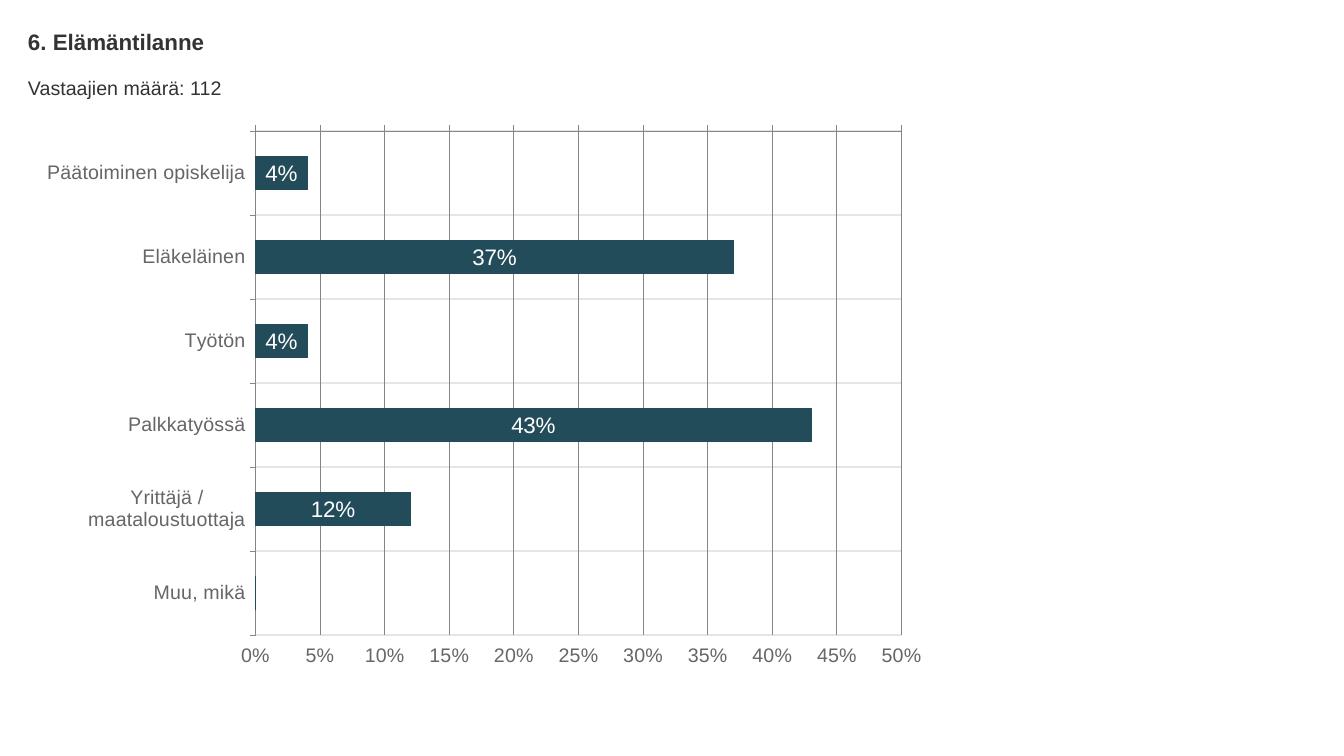
from dataclasses import dataclass

from lxml.etree import SubElement
from pptx import Presentation
from pptx.chart.data import CategoryChartData
from pptx.dml.color import RGBColor
from pptx.enum.chart import XL_CHART_TYPE as ChartType
from pptx.enum.chart import XL_LABEL_POSITION as LabelPosition
from pptx.enum.chart import XL_TICK_LABEL_POSITION as TickLabels
from pptx.enum.chart import XL_TICK_MARK as TickMark
from pptx.enum.text import MSO_AUTO_SIZE as AutoSize
from pptx.oxml.ns import qn
from pptx.util import Emu, Pt

ANSWERS = {
    "Päätoiminen opiskelija": 0.04,
    "Eläkeläinen": 0.37,
    "Työtön": 0.04,
    "Palkkatyössä": 0.43,
    "Yrittäjä / maataloustuottaja": 0.12,
    "Muu, mikä": 0,
}


@dataclass(frozen=True)
class Theme:
    font: str = "Arial"
    ink: str = "333333"
    axis_text: str = "666666"
    axis_line: str = "868686"
    row_line: str = "E6E6E6"
    bar: str = "234C5A"
    bar_text: str = "FFFFFF"
    title_size: int = 16
    body_size: int = 14
    label_size: int = 16


class SurveySlide:
    EMU_PER_PX = 914400 / 100.8

    def __init__(self, presentation, theme):
        self.theme = theme
        presentation.slide_width = self.px(1344)
        presentation.slide_height = self.px(756)
        self.slide = presentation.slides.add_slide(presentation.slide_layouts[6])

    def px(self, length):
        return Emu(round(length * self.EMU_PER_PX))

    def box(self, *lengths):
        return [self.px(length) for length in lengths]

    def style_font(self, font, size, color, bold=False):
        font.name = self.theme.font
        font.size = Pt(size)
        font.bold = bold
        font.color.rgb = RGBColor.from_string(color)

    def style_line(self, line, color, width=0.75):
        line.color.rgb = RGBColor.from_string(color)
        line.width = Pt(width)

    def text(self, content, box, size, bold=False):
        frame = self.slide.shapes.add_textbox(*self.box(*box)).text_frame
        frame.margin_left = frame.margin_right = 0
        frame.margin_top = frame.margin_bottom = 0
        frame.word_wrap = True
        frame.auto_size = AutoSize.SHAPE_TO_FIT_TEXT
        frame.text = content
        self.style_font(frame.paragraphs[0].runs[0].font, size, self.theme.ink, bold)

    def style_axis(self, axis, grid_color, grid_width):
        axis.has_major_gridlines = True
        axis.major_tick_mark = TickMark.OUTSIDE
        axis.minor_tick_mark = TickMark.NONE
        self.style_font(axis.tick_labels.font, self.theme.body_size, self.theme.axis_text)
        self.style_line(axis.format.line, self.theme.axis_line)
        self.style_line(axis.major_gridlines.format.line, grid_color, grid_width)

    def place_plot(self, chart, **fractions):
        plot_area = chart.plots[0]._element.getparent()
        layout = plot_area.find(qn("c:layout"))
        if layout is None:
            layout = SubElement(plot_area, qn("c:layout"))
            plot_area.insert(0, layout)
        manual = SubElement(layout, qn("c:manualLayout"))
        settings = {"layoutTarget": "inner", "xMode": "edge", "yMode": "edge", **fractions}
        for name, value in settings.items():
            SubElement(manual, qn(f"c:{name}")).set("val", str(value))

    def bar_chart(self, answers, box):
        theme = self.theme
        data = CategoryChartData(number_format="0%")
        data.categories = list(answers)
        data.add_series("Series 1", list(answers.values()))
        chart = self.slide.shapes.add_chart(
            ChartType.BAR_CLUSTERED, *self.box(*box), data
        ).chart
        chart.has_legend = False
        chart.has_title = False
        self.style_font(chart.font, theme.body_size, theme.axis_text)

        rows = chart.category_axis
        self.style_axis(rows, theme.row_line, 1)
        rows.reverse_order = True
        rows.tick_label_position = TickLabels.LOW

        scale = chart.value_axis
        self.style_axis(scale, theme.axis_line, 0.75)
        scale.minimum_scale, scale.maximum_scale, scale.major_unit = 0, 0.5, 0.05
        scale.tick_label_position = TickLabels.HIGH
        scale.tick_labels.number_format = "0%"
        scale.tick_labels.number_format_is_linked = False

        plot = chart.plots[0]
        plot.gap_width = 150
        plot.vary_by_categories = False
        plot.has_data_labels = True
        labels = plot.data_labels
        labels.show_value = True
        labels.number_format = "0%;;"
        labels.number_format_is_linked = False
        labels.position = LabelPosition.CENTER
        self.style_font(labels.font, theme.label_size, theme.bar_text)

        bars = plot.series[0].format
        bars.fill.solid()
        bars.fill.fore_color.rgb = RGBColor.from_string(theme.bar)
        self.style_line(bars.line, theme.bar)
        self.place_plot(chart, x=0.25, y=0.02, w=0.71, h=0.9)


def main():
    presentation = Presentation()
    theme = Theme()
    survey = SurveySlide(presentation, theme)
    survey.text("6. Elämäntilanne", (28, 28, 1288, 27), theme.title_size, bold=True)
    survey.text("Vastaajien määrä: 112", (28, 76, 1288, 23), theme.body_size)
    survey.bar_chart(ANSWERS, (28, 120, 910, 560))
    presentation.save("out.pptx")


if __name__ == "__main__":
    main()
